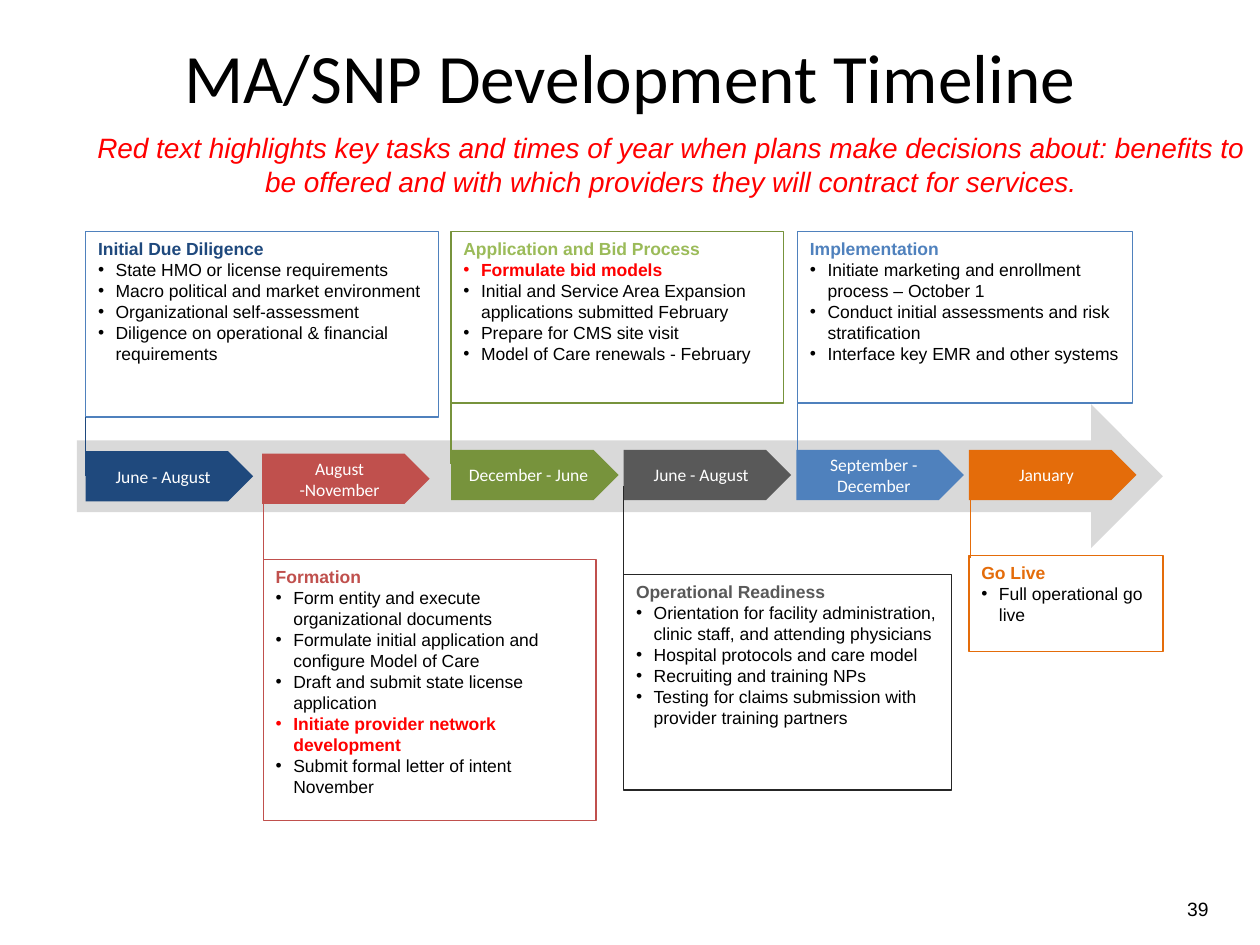
from dataclasses import dataclass

from lxml.etree import SubElement
from pptx import Presentation
from pptx.dml.color import RGBColor
from pptx.enum.shapes import MSO_CONNECTOR, MSO_SHAPE
from pptx.enum.text import MSO_ANCHOR, PP_ALIGN
from pptx.oxml.ns import qn
from pptx.util import Inches, Pt

BLACK, RED, WHITE = "000000", "FF0000", "FFFFFF"
PLATE_WIDTH, PLATE_HEIGHT = 1.33, 0.4
BULLET_INDENT = 0.14


@dataclass(frozen=True)
class Box:
    left: float
    top: float
    width: float
    height: float

    def lengths(self):
        return [Inches(n) for n in (self.left, self.top, self.width, self.height)]


@dataclass(frozen=True)
class Stage:
    heading: str
    period: str
    tasks: tuple[str, ...]
    card: Box
    plate_left: float
    plate_top: float
    stem: tuple[float, float, float]
    color: str
    heading_color: str
    border: str
    key_task: str = ""


STAGES = (
    Stage("Initial Due Diligence", "June - August",
          ("State HMO or license requirements",
           "Macro political and market environment",
           "Organizational self-assessment",
           "Diligence on operational & financial requirements"),
          Box(0.68, 1.84, 2.8, 1.47), 0.68, 3.58, (0.68, 3.31, 3.78),
          "1F497D", "1F497D", "4F81BD"),
    Stage("Formation", "August -November",
          ("Form entity and execute organizational documents",
           "Formulate initial application and configure Model of Care",
           "Draft and submit state license application",
           "Initiate provider network development",
           "Submit formal letter of intent November"),
          Box(2.09, 4.44, 2.64, 2.07), 2.08, 3.6, (2.09, 3.78, 4.54),
          "C0504D", "C0504D", "C0504D", "Initiate provider network development"),
    Stage("Application and Bid Process", "December - June",
          ("Formulate bid models",
           "Initial and Service Area Expansion applications submitted February",
           "Prepare for CMS site visit",
           "Model of Care renewals - February"),
          Box(3.58, 1.84, 2.64, 1.36), 3.58, 3.57, (3.58, 2.93, 3.68),
          "77933C", "9BBB59", "77933C", "Formulate bid models"),
    Stage("Operational Readiness", "June - August",
          ("Orientation for facility administration, clinic staff, and attending physicians",
           "Hospital protocols and care model",
           "Recruiting and training NPs",
           "Testing for claims submission with provider training partners"),
          Box(4.95, 4.56, 2.6, 1.71), 4.95, 3.57, (4.95, 3.86, 4.61),
          "595959", "595959", "262626"),
    Stage("Implementation", "September - December",
          ("Initiate marketing and enrollment process – October 1",
           "Conduct initial assessments and risk stratification",
           "Interface key EMR and other systems"),
          Box(6.33, 1.84, 2.66, 1.36), 6.32, 3.57, (6.33, 3, 3.76),
          "4F81BD", "4F81BD", "4F81BD"),
    Stage("Go Live", "January", ("Full operational go live",),
          Box(7.69, 4.41, 1.54, 0.76), 7.69, 3.57, (7.7, 3.67, 4.43),
          "E46C0A", "E46C0A", "E46C0A"),
)


def rgb(color: str) -> RGBColor:
    return RGBColor.from_string(color)


def write(paragraph, text: str, *, size: float = 10, font: str = "Arial",
          color: str = BLACK, bold: bool = False, italic: bool = False,
          align=PP_ALIGN.LEFT, bullet: bool = False) -> None:
    paragraph.alignment = align
    if bullet:
        properties = paragraph._p.get_or_add_pPr()
        properties.set("marL", str(Inches(BULLET_INDENT)))
        properties.set("indent", str(-Inches(BULLET_INDENT)))
        SubElement(properties, qn("a:buFont")).set("typeface", "Arial")
        SubElement(properties, qn("a:buChar")).set("char", "•")
    run = paragraph.add_run()
    run.text = text
    run.font.size = Pt(size)
    run.font.name = font
    run.font.bold = bold
    run.font.italic = italic
    run.font.color.rgb = rgb(color)


def add_text(slide, box: Box, text: str, anchor=MSO_ANCHOR.TOP, **style) -> None:
    frame = slide.shapes.add_textbox(*box.lengths()).text_frame
    frame.word_wrap = True
    frame.vertical_anchor = anchor
    write(frame.paragraphs[0], text, **style)


def add_block(slide, preset, box: Box, fill: str = "", border: str = ""):
    block = slide.shapes.add_shape(preset, *box.lengths())
    block.shadow.inherit = False
    if fill:
        block.fill.solid()
        block.fill.fore_color.rgb = rgb(fill)
    else:
        block.fill.background()
    if border:
        block.line.color.rgb = rgb(border)
        block.line.width = Pt(0.75)
    else:
        block.line.fill.background()
    block.text_frame.word_wrap = True
    return block


def add_card(slide, stage: Stage) -> None:
    frame = add_block(slide, MSO_SHAPE.RECTANGLE, stage.card, border=stage.border).text_frame
    frame.vertical_anchor = MSO_ANCHOR.TOP
    write(frame.paragraphs[0], stage.heading, color=stage.heading_color, bold=True)
    for task in stage.tasks:
        is_key = task == stage.key_task
        write(frame.add_paragraph(), task, color=RED if is_key else BLACK,
              bold=is_key, bullet=True)


def add_plate(slide, stage: Stage) -> None:
    box = Box(stage.plate_left, stage.plate_top, PLATE_WIDTH, PLATE_HEIGHT)
    frame = add_block(slide, MSO_SHAPE.PENTAGON, box, fill=stage.color).text_frame
    frame.vertical_anchor = MSO_ANCHOR.MIDDLE
    write(frame.paragraphs[0], stage.period, font="Calibri", color=WHITE,
          align=PP_ALIGN.CENTER)


def add_stem(slide, stage: Stage) -> None:
    x, top, bottom = (Inches(n) for n in stage.stem)
    stem = slide.shapes.add_connector(MSO_CONNECTOR.STRAIGHT, x, top, x, bottom)
    stem.line.color.rgb = rgb("262626" if stage.border == "262626" else stage.color)
    stem.line.width = Pt(0.75)
    SubElement(stem._element.spPr, qn("a:effectLst"))


def main() -> None:
    deck = Presentation()
    deck.slide_width, deck.slide_height = Inches(10), Inches(7.5)
    slide = deck.slides.add_slide(deck.slide_layouts[6])

    add_text(slide, Box(0.69, 0.39, 8.62, 0.42), "MA/SNP Development Timeline",
             MSO_ANCHOR.MIDDLE, size=39.6, font="Calibri", align=PP_ALIGN.CENTER)
    add_text(slide, Box(7.94, 7.06, 1.75, 0.3), "39", MSO_ANCHOR.MIDDLE,
             size=11, align=PP_ALIGN.RIGHT)
    add_block(slide, MSO_SHAPE.RIGHT_ARROW, Box(0.61, 3.21, 8.62, 1.14), fill="D9D9D9")
    for add_part in (add_card, add_plate, add_stem):
        for stage in STAGES:
            add_part(slide, stage)
    add_text(slide, Box(0.62, 0.99, 9.41, 0.64),
             "Red text highlights key tasks and times of year when plans make decisions "
             "about: benefits to be offered and with which providers they will contract "
             "for services.",
             size=16, color=RED, italic=True, align=PP_ALIGN.CENTER)

    deck.save("out.pptx")


if __name__ == "__main__":
    main()
